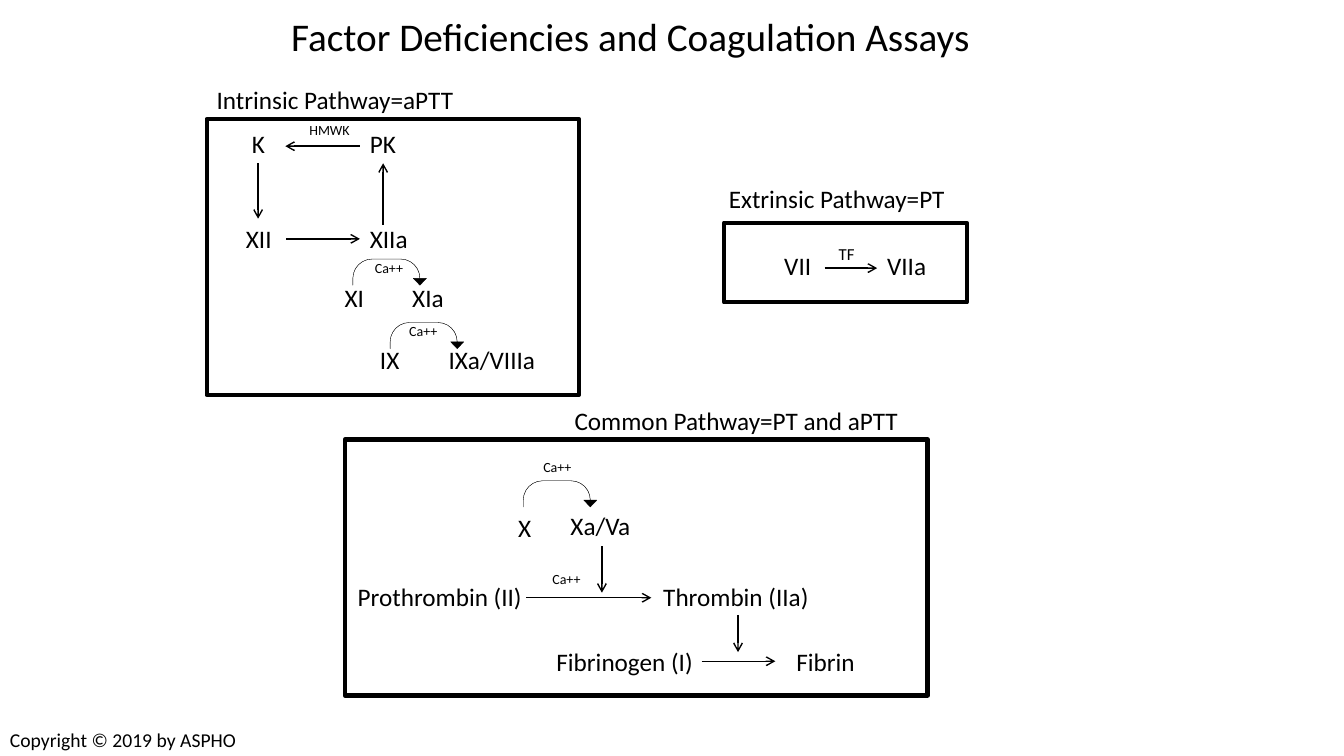
import pptx
import pptx.dml.color
import pptx.enum.shapes
import pptx.enum.text
import pptx.util
from lxml import etree
from pptx.oxml.ns import qn
from pptx.util import Inches

COLORS = {"ink": "000000"}
INK = pptx.dml.color.RGBColor.from_string(COLORS["ink"])
SHAPES = pptx.enum.shapes.MSO_SHAPE

deck = pptx.Presentation()
deck.slide_width = Inches(13.33)
deck.slide_height = Inches(7.5)
slide = deck.slides.add_slide(deck.slide_layouts[6])


def add_label(text, left, top, width, height=0.4, size=18):
    label = slide.shapes.add_textbox(Inches(left), Inches(top), Inches(width), Inches(height))
    label.text_frame.word_wrap = True
    paragraph = label.text_frame.paragraphs[0]
    paragraph.text = text
    paragraph.font.size = pptx.util.Pt(size)
    paragraph.font.name = "Calibri"
    paragraph.font.color.rgb = INK
    return label


title = add_label("Factor Deficiencies and Coagulation Assays", 2.79, 0.04, 6.96, 0.69, 28)
title.text_frame.vertical_anchor = pptx.enum.text.MSO_ANCHOR.MIDDLE
title.text_frame.paragraphs[0].line_spacing = 0.9

# Pathway frames: left, top, width, height
for left, top, width, height in [
    (2.05, 1.18, 3.69, 2.74),
    (7.18, 2.21, 2.41, 0.79),
    (3.42, 4.36, 5.78, 2.54),
]:
    frame = slide.shapes.add_shape(
        SHAPES.RECTANGLE, Inches(left), Inches(top), Inches(width), Inches(height))
    frame.shadow.inherit = False
    frame.fill.background()
    frame.line.color.rgb = INK
    frame.line.width = pptx.util.Pt(3)

# Pathway headings and clotting factors: text, left, top, width
for text, left, top, width in [
    ("Intrinsic Pathway=aPTT", 2.05, 0.79, 3.69),
    ("K", 2.4, 1.22, 0.34),
    ("PK", 3.57, 1.22, 0.75),
    ("XII", 2.34, 2.17, 0.61),
    ("XIIa", 3.57, 2.17, 0.7),
    ("XI", 3.32, 2.75, 0.45),
    ("XIa", 3.99, 2.75, 0.58),
    ("IX", 3.67, 3.37, 0.45),
    ("IXa/VIIIa", 4.35, 3.37, 1.21),
    ("Extrinsic Pathway=PT", 7.13, 1.77, 2.63),
    ("VII", 7.68, 2.43, 0.63),
    ("VIIa", 8.7, 2.43, 0.71),
    ("Common Pathway=PT and aPTT", 5.6, 3.97, 3.98),
    ("X", 5.04, 5.03, 0.31),
    ("Xa/Va", 5.56, 5.01, 1.08),
    ("Prothrombin (II)", 3.45, 5.72, 1.93),
    ("Thrombin (IIa)", 6.48, 5.72, 1.93),
    ("Fibrinogen (I)", 5.42, 6.36, 1.71),
    ("Fibrin", 7.8, 6.36, 1),
]:
    add_label(text, left, top, width)

# Curved activation arrows: left, top
for left, top in [(3.5, 2.57), (3.87, 3.2), (5.19, 4.77)]:
    activation = slide.shapes.add_shape(
        SHAPES.U_TURN_ARROW, Inches(left), Inches(top), Inches(0.73), Inches(0.26))
    for index, value in enumerate([0, 0.25, 0.262, 0.738, 1]):
        activation.adjustments[index] = value
    activation.shadow.inherit = False
    activation.fill.solid()
    activation.fill.fore_color.rgb = INK
    activation.line.color.rgb = INK
    activation.line.width = pptx.util.Pt(0.25)

# Cofactors: text, left, top, width
for text, left, top, width in [
    ("HMWK", 2.97, 1.16, 0.64),
    ("Ca++", 3.62, 2.53, 0.67),
    ("Ca++", 3.96, 3.15, 0.52),
    ("Ca++", 5.29, 4.5, 0.52),
    ("Ca++", 5.38, 5.61, 0.52),
]:
    add_label(text, left, top, width, 0.27, 10)
add_label("TF", 8.22, 2.37, 0.52, 0.3, 12)

# Straight reaction arrows: start x, start y, end x, end y
for start_x, start_y, end_x, end_y in [
    (3.57, 1.45, 2.83, 1.45),
    (2.56, 1.62, 2.56, 2.17),
    (2.84, 2.37, 3.57, 2.37),
    (3.8, 2.23, 3.8, 1.62),
    (8.18, 2.66, 8.7, 2.66),
    (5.97, 5.42, 5.97, 5.88),
    (5.22, 5.93, 6.46, 5.93),
    (7.32, 6.1, 7.32, 6.47),
    (6.96, 6.56, 7.69, 6.56),
]:
    reaction = slide.shapes.add_connector(
        pptx.enum.shapes.MSO_CONNECTOR.STRAIGHT,
        Inches(start_x), Inches(start_y), Inches(end_x), Inches(end_y))
    reaction.line.color.rgb = INK
    reaction.line.width = pptx.util.Pt(1)
    etree.SubElement(reaction.line._get_or_add_ln(), qn("a:tailEnd"), type="arrow")
    etree.SubElement(reaction._element.spPr, qn("a:effectLst"))

add_label("Copyright © 2019 by ASPHO", 0, 7.17, 2.48, 0.34, 14)

deck.save("out.pptx")
